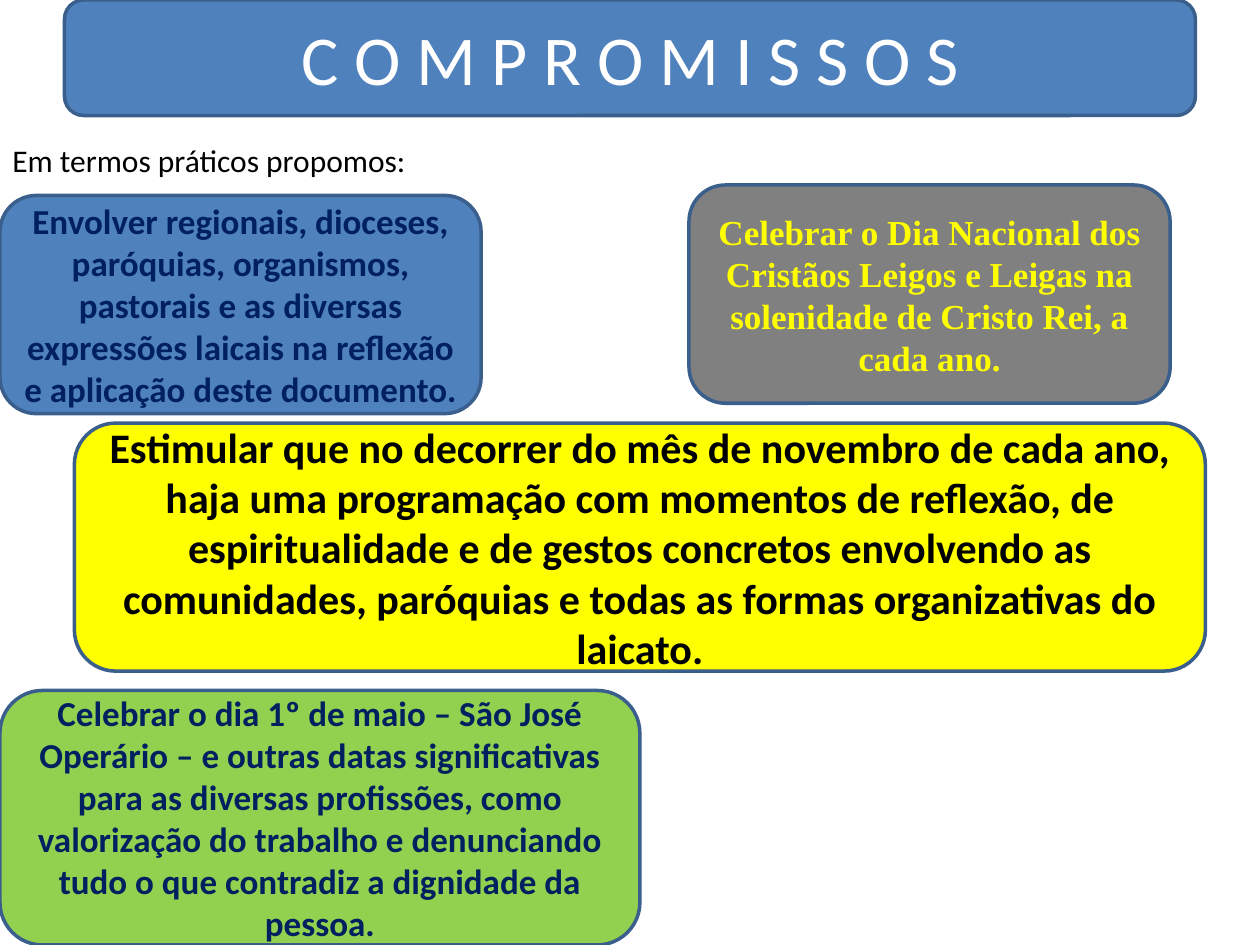
from pptx import Presentation
from pptx.dml.color import RGBColor
from pptx.enum.shapes import MSO_SHAPE as Shape
from pptx.enum.text import MSO_ANCHOR as Anchor, MSO_AUTO_SIZE as Fit, PP_ALIGN as Align
from pptx.util import Cm, Pt

BLUE, EDGE, NAVY = "4F81BD", "3A5F8C", "002060"
BLACK, WHITE, YELLOW = "000000", "FFFFFF", "FFFF00"

# box (left, top, width, height in cm), fill, text format, wording
CARDS = [
    ((0, 3.94, 9.7, 4.4), BLUE, dict(size=20, color=NAVY, bold=True),
     "Envolver regionais, dioceses, paróquias, organismos, pastorais e as diversas "
     "expressões laicais na reflexão e aplicação deste documento."),
    ((13.89, 3.73, 9.7, 4.4), "808080",
     dict(size=20, color=YELLOW, bold=True, name="Times New Roman"),
     "Celebrar o Dia Nacional dos Cristãos Leigos e Leigas na solenidade de "
     "Cristo Rei, a cada ano."),
    ((1.5, 8.53, 22.8, 5), YELLOW, dict(size=24, color=BLACK, bold=True),
     "Estimular que no decorrer do mês de novembro de cada ano, haja uma programação "
     "com momentos de reflexão, de espiritualidade e de gestos concretos envolvendo as "
     "comunidades, paróquias e todas as formas organizativas do laicato."),
    ((0, 13.92, 12.9, 5.13), "92D050", dict(size=20, color=NAVY, bold=True),
     "Celebrar o dia 1º de maio – São José Operário – e outras datas significativas "
     "para as diversas profissões, como valorização do trabalho e denunciando tudo o "
     "que contradiz a dignidade da pessoa."),
]


def paint(target, color):
    target.rgb = RGBColor.from_string(color)


def place(shape, box):
    for side, value in zip(("left", "top", "width", "height"), box):
        setattr(shape, side, Cm(value))


def write(shape, text, color, size, align=Align.CENTER, anchor=Anchor.MIDDLE,
          fit=Fit.NONE, name="Calibri", bold=False):
    frame = shape.text_frame
    frame.text = text
    for key, value in dict(word_wrap=True, auto_size=fit, vertical_anchor=anchor).items():
        setattr(frame, key, value)
    para = frame.paragraphs[0]
    para.alignment = align
    font = para.runs[0].font
    for key, value in dict(name=name, size=Pt(size), bold=bold).items():
        setattr(font, key, value)
    paint(font.color, color)


def add_panel(slide, box, fill):
    """Add a rounded, outlined panel without text."""
    panel = slide.shapes.add_shape(Shape.ROUNDED_RECTANGLE, *map(Cm, box))
    panel.shadow.inherit = False
    panel.fill.solid()
    paint(panel.fill.fore_color, fill)
    paint(panel.line.color, EDGE)
    panel.line.width = Pt(2)
    return panel


def add_header(slide, box):
    """Put the title over a rounded bar."""
    bar = add_panel(slide, box, BLUE)
    title = slide.shapes.title
    bar._element.addnext(title._element)
    place(title, box)
    write(title, "C O M P R O M I S S O S", WHITE, 40)


def add_intro(slide, box):
    intro = slide.shapes.add_textbox(*map(Cm, box))
    write(intro, "Em termos práticos propomos:", BLACK, 18,
          align=Align.LEFT, anchor=Anchor.TOP, fit=Fit.SHAPE_TO_FIT_TEXT)


def add_card(slide, box, fill, form, text):
    write(add_panel(slide, box, fill), text, **form)


def main():
    deck = Presentation()
    deck.slide_width, deck.slide_height = Cm(25.4), Cm(19.05)
    slide = deck.slides.add_slide(deck.slide_layouts.get_by_name("Title Only"))
    add_header(slide, (1.3, 0, 22.8, 2.33))
    add_intro(slide, (0, 2.72, 24.3, 8.72))
    for card in CARDS:
        add_card(slide, *card)
    deck.save("out.pptx")


if __name__ == "__main__":
    main()
